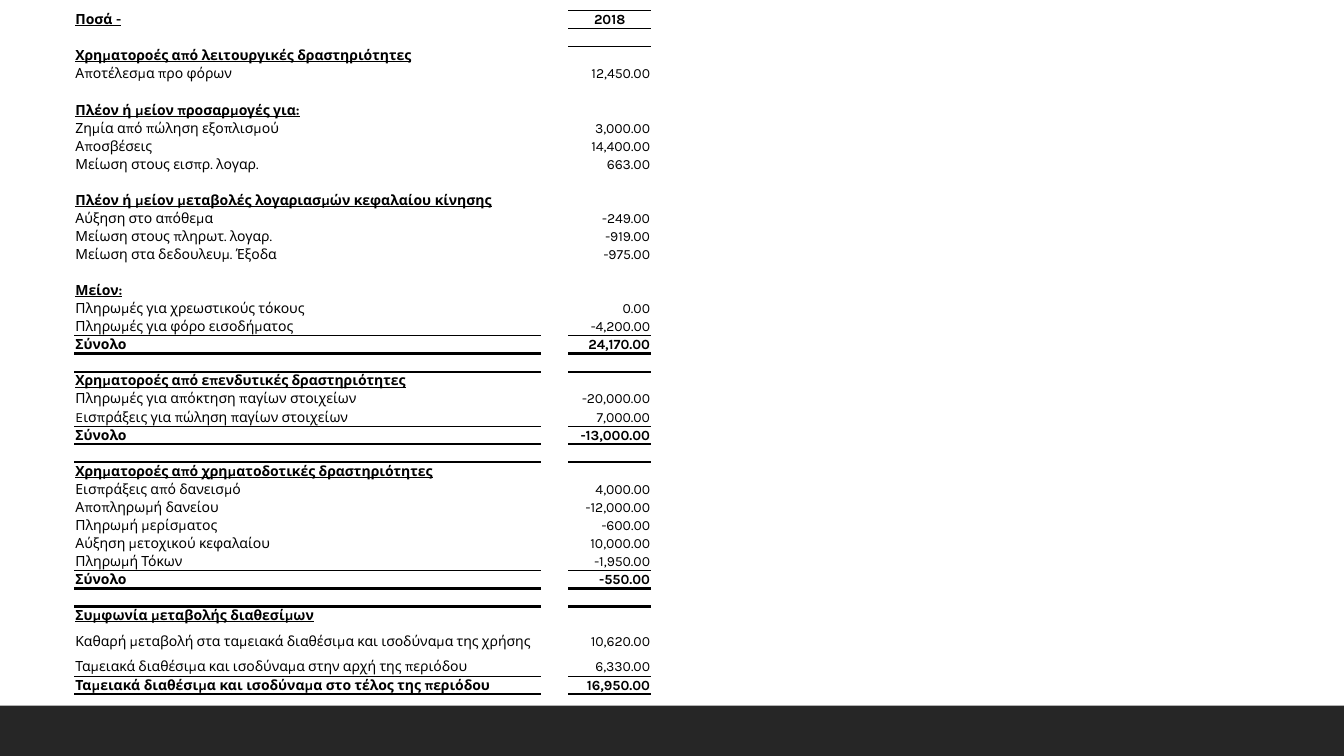
from dataclasses import dataclass

from lxml import etree
from pptx import Presentation
from pptx.dml.color import RGBColor
from pptx.enum.shapes import MSO_SHAPE
from pptx.enum.text import MSO_ANCHOR, PP_ALIGN
from pptx.oxml.ns import qn
from pptx.util import Pt

RECT = MSO_SHAPE.RECTANGLE
MIDDLE = MSO_ANCHOR.MIDDLE
LEFT, CENTER, RIGHT = PP_ALIGN.LEFT, PP_ALIGN.CENTER, PP_ALIGN.RIGHT
PLAIN_STYLE = "{2D5ABB26-0587-4C30-8999-92F81FD0307C}"


@dataclass(frozen=True)
class Theme:
    """Colours, font, type size and rule weights of the slide."""
    ink: str = "000000"
    paper: str = "FFFFFF"
    bar: str = "262626"
    font: str = "Karla"
    size: float = 10
    thin: float = 0.5
    medium: float = 1
    thick: float = 2


THEME = Theme()
SLIDE_W, SLIDE_H = 960, 540
BAR_H = 36
STATEMENT_BOX = (53.2, 7.6, 411.8, 488.2)
GUTTER_W, VALUE_W = 19.4, 59
TALL_ROW, TALL_H = 34, 23.8
CELL_MARGINS = {"margin_left": Pt(0.7), "margin_right": Pt(0.7),
                "margin_top": Pt(0.7), "margin_bottom": Pt(0)}
FORMATS = {
    "year": {"bold": True, "underline": True},
    "head": {"bold": True, "underline": True},
    "item": {"bold": False, "underline": False},
    "total": {"bold": True, "underline": False},
}
GAP = ("gap", "", "")
ROWS = [
    ("year", "Ποσά -", "2018"),
    GAP,
    ("head", "Χρηματοροές από λειτουργικές δραστηριότητες", ""),
    ("item", "Αποτέλεσμα προ φόρων", "12,450.00"),
    GAP,
    ("head", "Πλέον ή μείον προσαρμογές για:", ""),
    ("item", "Ζημία από πώληση εξοπλισμού", "3,000.00"),
    ("item", "Αποσβέσεις", "14,400.00"),
    ("item", "Μείωση στους εισπρ. λογαρ.", "663.00"),
    GAP,
    ("head", "Πλέον ή μείον μεταβολές λογαριασμών κεφαλαίου κίνησης", ""),
    ("item", "Αύξηση στο απόθεμα", "-249.00"),
    ("item", "Μείωση στους πληρωτ. λογαρ.", "-919.00"),
    ("item", "Μείωση στα δεδουλευμ. Έξοδα", "-975.00"),
    GAP,
    ("head", "Μείον:", ""),
    ("item", "Πληρωμές για χρεωστικούς τόκους", "0.00"),
    ("item", "Πληρωμές για φόρο εισοδήματος", "-4,200.00"),
    ("total", "Σύνολο", "24,170.00"),
    GAP,
    ("head", "Χρηματοροές από επενδυτικές δραστηριότητες", ""),
    ("item", "Πληρωμές για απόκτηση παγίων στοιχείων", "-20,000.00"),
    ("item", "Eισπράξεις για πώληση παγίων στοιχείων", "7,000.00"),
    ("total", "Σύνολο", "-13,000.00"),
    GAP,
    ("head", "Χρηματοροές από χρηματοδοτικές δραστηριότητες", ""),
    ("item", "Εισπράξεις από δανεισμό", "4,000.00"),
    ("item", "Αποπληρωμή δανείου", "-12,000.00"),
    ("item", "Πληρωμή μερίσματος", "-600.00"),
    ("item", "Αύξηση μετοχικού κεφαλαίου", "10,000.00"),
    ("item", "Πληρωμή Τόκων", "-1,950.00"),
    ("total", "Σύνολο", "-550.00"),
    GAP,
    ("head", "Συμφωνία μεταβολής διαθεσίμων", ""),
    ("item", "Καθαρή μεταβολή στα ταμειακά διαθέσιμα και ισοδύναμα της χρήσης", "10,620.00"),
    ("item", "Ταμειακά διαθέσιμα και ισοδύναμα στην αρχή της περιόδου", "6,330.00"),
    ("total", "Ταμειακά διαθέσιμα και ισοδύναμα στο τέλος της περιόδου", "16,950.00"),
]


def set_format(obj, values):
    """Set each attribute of obj from a dict of format values."""
    for name, value in values.items():
        setattr(obj, name, value)


def draw_border(cell, tag, width):
    """Give one side of a cell a solid ink rule."""
    ln = etree.SubElement(cell._tc.get_or_add_tcPr(), qn(tag), w=str(Pt(width)))
    fill = etree.SubElement(ln, qn("a:solidFill"))
    etree.SubElement(fill, qn("a:srgbClr"), val=THEME.ink)


def rule_below(kind, next_kind, col):
    """Return the weight of the rule under a row in a column, or None."""
    if col == 1:
        return None
    if kind == "year":
        return THEME.medium if col == 2 else None
    if kind == "total":
        return THEME.thick
    return THEME.thin if next_kind == "total" else None


def fill_cell(cell, text, align, font_format, top, bottom):
    """Write a cell's text, rules and background."""
    set_format(cell, {**CELL_MARGINS, "vertical_anchor": MIDDLE})
    for tag, width in (("a:lnT", top), ("a:lnB", bottom)):
        if width:
            draw_border(cell, tag, width)
    cell.fill.solid()
    cell.fill.fore_color.rgb = RGBColor.from_string(THEME.paper)
    p = cell.text_frame.paragraphs[0]
    p.alignment = align
    if text:
        r = p.add_run()
        r.text = text
        set_format(r.font, {"name": THEME.font, "size": Pt(THEME.size), **font_format})
        r.font.color.rgb = RGBColor.from_string(THEME.ink)
    else:
        etree.SubElement(p._p, qn("a:endParaRPr"), sz=str(int(THEME.size * 100)))


def add_statement(s, box):
    """Place the cash flow statement table in the box."""
    x, y, w, h = box
    frame = s.shapes.add_table(len(ROWS), 3, Pt(x), Pt(y), Pt(w), Pt(h))
    tbl = frame.table
    set_format(tbl, {"first_row": False, "horz_banding": False})
    tbl._tbl.tblPr.find(qn("a:tableStyleId")).text = PLAIN_STYLE
    for col, width in zip(tbl.columns, (w - GUTTER_W - VALUE_W, GUTTER_W, VALUE_W)):
        col.width = Pt(width)
    row_h = (h - TALL_H) / (len(ROWS) - 1)
    kinds = [row[0] for row in ROWS] + [None]
    above = [None, None, THEME.thin]
    for i, (kind, label, value) in enumerate(ROWS):
        tbl.rows[i].height = Pt(TALL_H if i == TALL_ROW else row_h)
        below = [rule_below(kind, kinds[i + 1], col) for col in range(3)]
        label_format = FORMATS.get(kind, {})
        value_format = {**label_format, "underline": False}
        value_align = CENTER if kind == "year" else RIGHT
        parts = ((label, LEFT, label_format), ("", LEFT, {}),
                 (value, value_align, value_format))
        for col, part in enumerate(parts):
            fill_cell(tbl.cell(i, col), *part, above[col], below[col])
        above = below


def add_bottom_bar(s, box):
    """Fill the box with the dark bar."""
    sp = s.shapes.add_shape(RECT, *map(Pt, box))
    sp.shadow.inherit = False
    sp.fill.solid()
    sp.fill.fore_color.rgb = RGBColor.from_string(THEME.bar)
    sp.line.fill.background()


def main():
    """Build the slide and save it."""
    prs = Presentation()
    set_format(prs, {"slide_width": Pt(SLIDE_W), "slide_height": Pt(SLIDE_H)})
    s = prs.slides.add_slide(prs.slide_layouts[6])
    add_bottom_bar(s, (0, SLIDE_H - BAR_H, SLIDE_W, BAR_H))
    add_statement(s, STATEMENT_BOX)
    prs.save("out.pptx")


if __name__ == "__main__":
    main()
